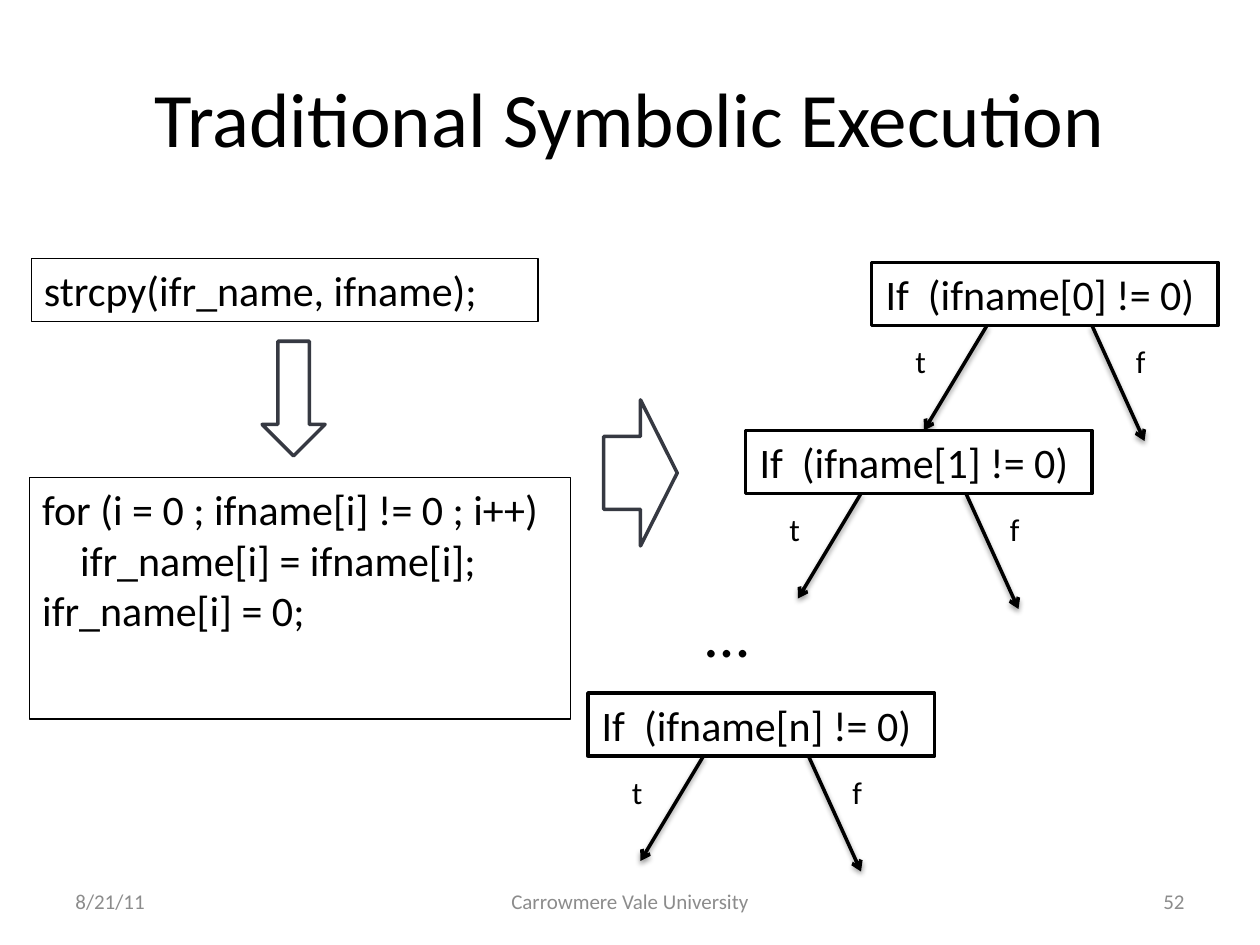
"""Build a slide on how symbolic execution forks at every loop test."""
from lxml.etree import SubElement
from pptx import Presentation
from pptx.dml.color import RGBColor
from pptx.enum.shapes import MSO_CONNECTOR, MSO_SHAPE
from pptx.enum.text import MSO_ANCHOR, PP_ALIGN
from pptx.oxml import parse_xml
from pptx.oxml.ns import nsdecls, qn
from pptx.util import Pt

BLACK = RGBColor(0x00, 0x00, 0x00)
WHITE = RGBColor(0xFF, 0xFF, 0xFF)
SLATE = RGBColor(0x36, 0x39, 0x42)
GRAY = RGBColor(0x8C, 0x8C, 0x8C)
FONT = "Calibri"

LINE_SHADOW = (
    f'<a:effectLst {nsdecls("a")}>'
    f'<a:outerShdw blurRad="{Pt(3.1)}" dist="{Pt(1.6)}" dir="5400000" rotWithShape="0">'
    '<a:srgbClr val="000000"><a:alpha val="38000"/></a:srgbClr>'
    '</a:outerShdw></a:effectLst>'
)


def write(sp, text, size, color=BLACK, align=PP_ALIGN.LEFT, anchor=MSO_ANCHOR.TOP):
    """Fill a shape with text in one style."""
    tf = sp.text_frame
    tf.word_wrap = True
    tf.vertical_anchor = anchor
    tf.text = text
    for p in tf.paragraphs:
        p.alignment = align
        for r in p.runs:
            r.font.name = FONT
            r.font.size = Pt(size)
            r.font.color.rgb = color


def add_label(s, text, x, y, w, h, size, **style):
    """Add a plain text box."""
    sp = s.shapes.add_textbox(Pt(x), Pt(y), Pt(w), Pt(h))
    write(sp, text, size, **style)


def add_figure(s, kind, x, y, w, h, line, width, fill=None):
    """Add an outlined preset shape, filled only when a fill is given."""
    sp = s.shapes.add_shape(kind, Pt(x), Pt(y), Pt(w), Pt(h))
    sp.shadow.inherit = False
    if fill is None:
        sp.fill.background()
    else:
        sp.fill.solid()
        sp.fill.fore_color.rgb = fill
    sp.line.color.rgb = line
    sp.line.width = Pt(width)
    return sp


def add_code(s, text, x, y, w, h):
    """Add a thin-framed box of code."""
    sp = add_figure(s, MSO_SHAPE.RECTANGLE, x, y, w, h, BLACK, 0.75)
    write(sp, text, 24)
    return sp


def add_arrow(s, x1, y1, x2, y2):
    """Add a shadowed line with an open arrowhead at its end."""
    cx = s.shapes.add_connector(MSO_CONNECTOR.STRAIGHT, Pt(x1), Pt(y1), Pt(x2), Pt(y2))
    cx.line.color.rgb = BLACK
    cx.line.width = Pt(2)
    SubElement(cx.line._get_or_add_ln(), qn("a:tailEnd"), type="arrow")
    cx._element.spPr.append(parse_xml(LINE_SHADOW))


def add_branch(s, index, x, y):
    """Add a test on one character with its true and false exits."""
    sp = add_figure(s, MSO_SHAPE.RECTANGLE, x, y, 198, 36, BLACK, 2, WHITE)
    write(sp, f"If  (ifname[{index}] != 0) ", 24, align=PP_ALIGN.CENTER)
    add_arrow(s, x + 66, y + 36, x + 30, y + 96)
    add_arrow(s, x + 126, y + 36, x + 156, y + 102)
    for text, dx in (("t", 18), ("f", 144)):
        add_label(s, text, x + dx, y + 42, 24, 36, 18)


def main():
    """Build and save the slide."""
    prs = Presentation()
    prs.slide_width, prs.slide_height = Pt(720), Pt(540)
    s = prs.slides.add_slide(prs.slide_layouts[6])

    add_label(s, "Traditional Symbolic Execution", 36, 21.6, 648, 90, 44,
              align=PP_ALIGN.CENTER, anchor=MSO_ANCHOR.MIDDLE)

    add_code(s, "strcpy(ifr_name, ifname);", 18, 147.6, 289.5, 36)
    add_figure(s, MSO_SHAPE.DOWN_ARROW, 149.8, 195, 36, 65.5, SLATE, 2, WHITE)
    loop = add_code(s, "for (i = 0 ; ifname[i] != 0 ; i++)\nifr_name[i] = ifname[i];\n"
                       "ifr_name[i] = 0;", 17, 273, 309, 138)
    loop.text_frame.paragraphs[1]._p.get_or_add_pPr().set("marL", str(Pt(21.7)))
    add_figure(s, MSO_SHAPE.RIGHT_ARROW, 345, 228.5, 42, 83.5, SLATE, 2, WHITE)

    for index, x, y in (("0", 498, 150), ("1", 426, 246), ("n", 336, 396)):
        add_branch(s, index, x, y)
    add_label(s, "…", 396, 336, 96, 18, 36)

    for text, x, w, align in (("8/21/11", 36, 168, PP_ALIGN.LEFT),
                              ("Carrowmere Vale University", 246, 228, PP_ALIGN.CENTER),
                              ("52", 516, 168, PP_ALIGN.RIGHT)):
        add_label(s, text, x, 500.5, w, 28.75, 12, color=GRAY,
                  align=align, anchor=MSO_ANCHOR.MIDDLE)

    prs.save("out.pptx")


if __name__ == "__main__":
    main()
